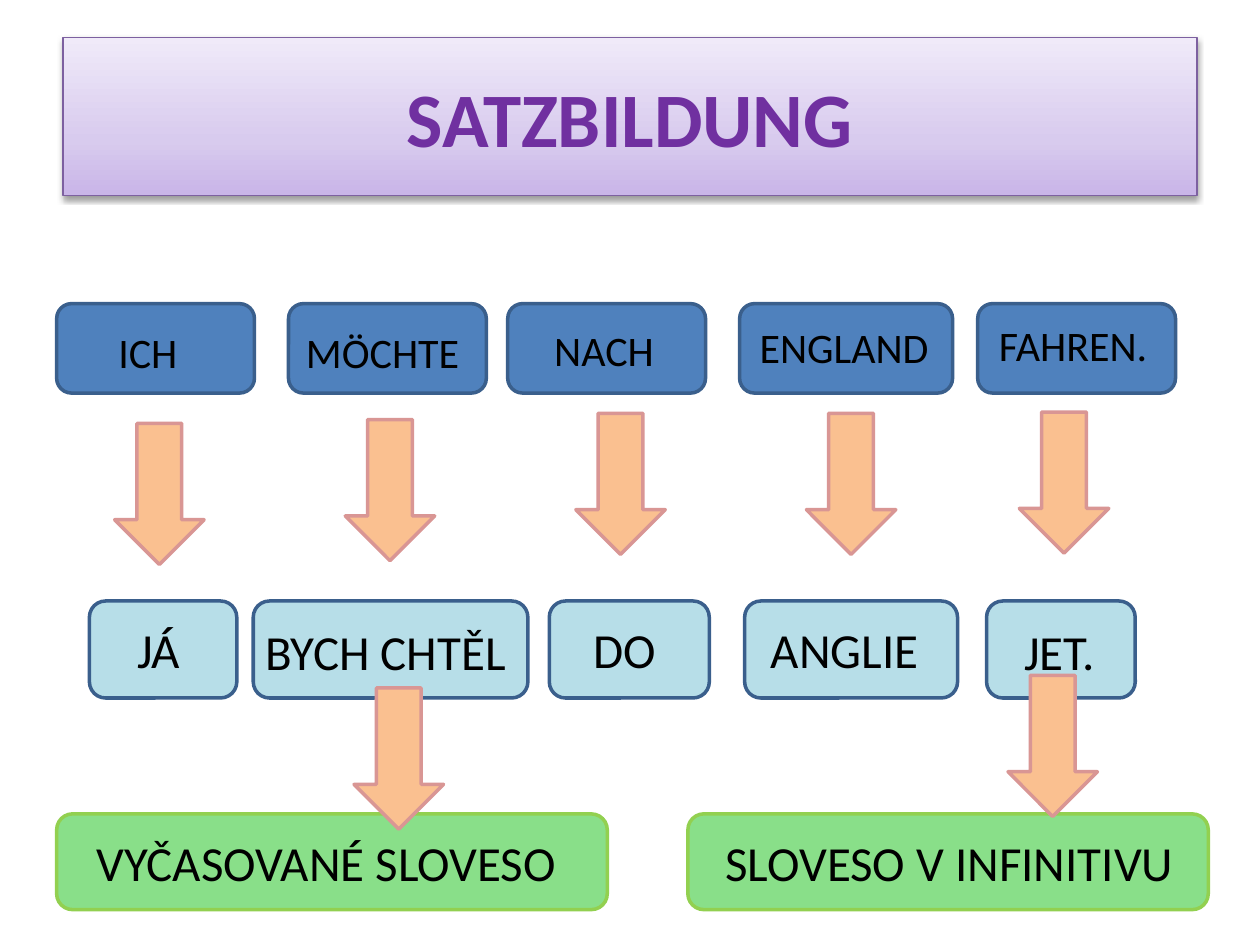
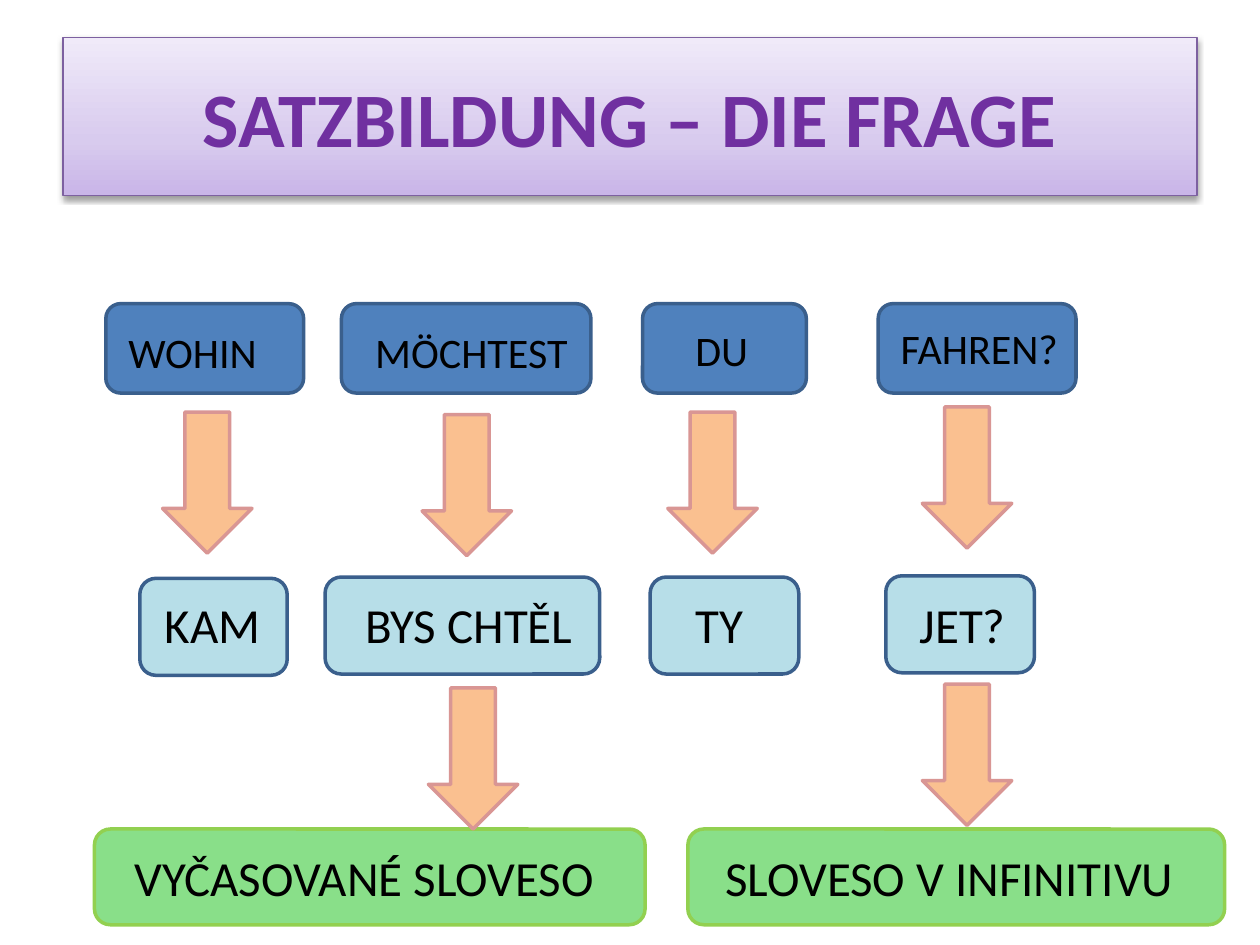
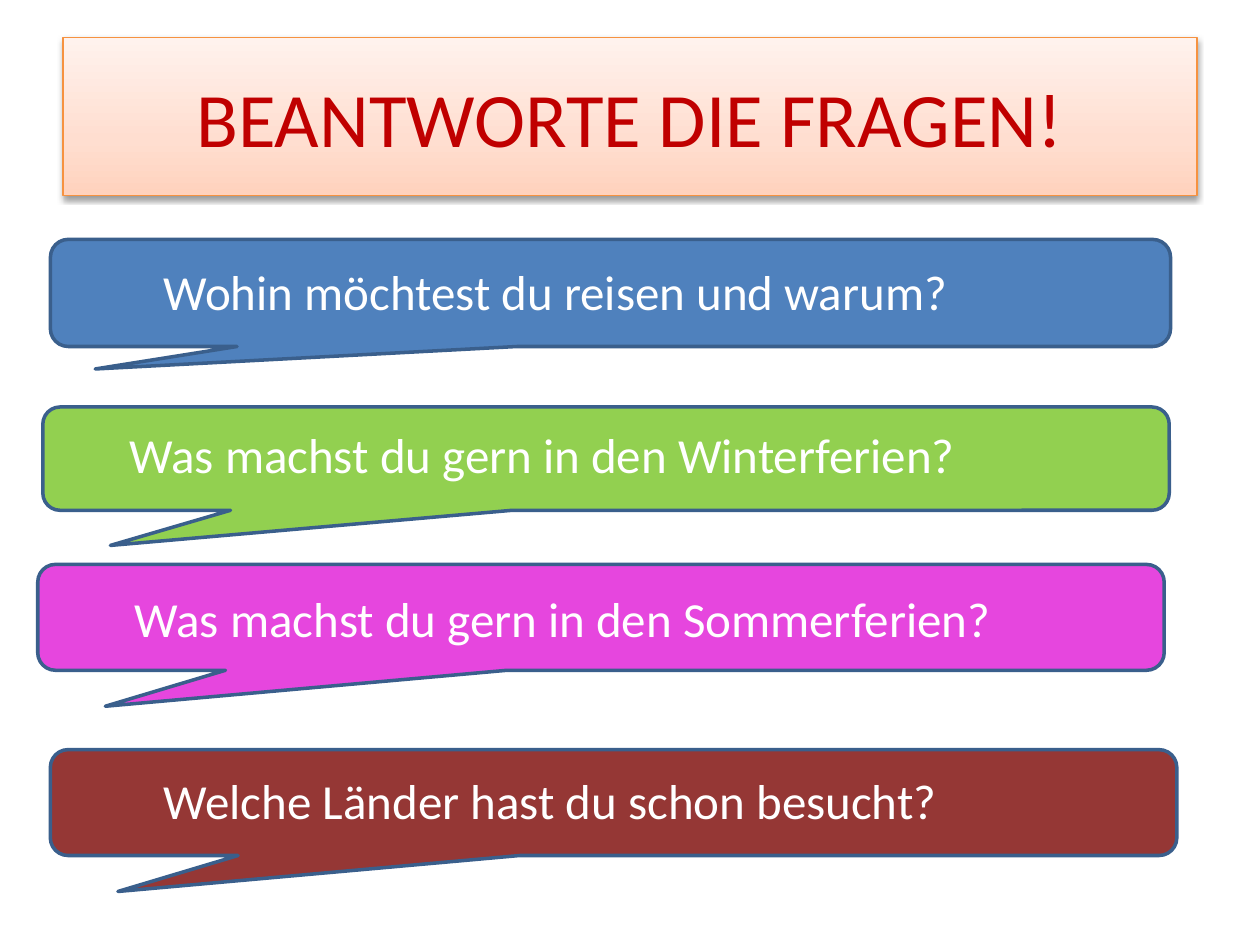
from copy import deepcopy

from lxml import etree
from pptx import Presentation
from pptx import util as u
from pptx.dml.color import RGBColor
from pptx.enum import shapes, text
from pptx.oxml.ns import qn

BLACK = RGBColor(0x00, 0x00, 0x00)
WHITE = RGBColor(0xFF, 0xFF, 0xFF)
BLUE = RGBColor(0x4F, 0x81, 0xBD)
DARK_BLUE = RGBColor(0x3A, 0x5F, 0x8C)
PALE_BLUE = RGBColor(0xB7, 0xDE, 0xE8)
PEACH = RGBColor(0xFA, 0xC0, 0x90)
ROSE = RGBColor(0xD9, 0x96, 0x94)
MINT = RGBColor(0x89, 0xDF, 0x89)
GREEN = RGBColor(0x92, 0xD0, 0x50)
PINK = RGBColor(0xE6, 0x46, 0xDE)
MAROON = RGBColor(0x95, 0x37, 0x35)
PURPLE = RGBColor(0x70, 0x30, 0xA0)
RED = RGBColor(0xC0, 0x00, 0x00)
VIOLET = RGBColor(0x7D, 0x60, 0xA0)
ORANGE = RGBColor(0xF6, 0x92, 0x40)
LILAC_BAND = [RGBColor(0xC9, 0xB5, 0xE8), RGBColor(0xD8, 0xCB, 0xEE), RGBColor(0xF0, 0xEA, 0xF9)]
APRICOT_BAND = [RGBColor(0xFF, 0xD2, 0xBD), RGBColor(0xFF, 0xDE, 0xD0), RGBColor(0xFF, 0xF2, 0xED)]

FONT = "Calibri"
KIND = shapes.MSO_SHAPE
GERMAN_TOP, GERMAN_HEIGHT = 2.41, 0.71
CZECH_HEIGHT, ROLE_HEIGHT = 0.77, 0.76
ARROW_WIDTH, ARROW_HEIGHT = 0.71, 1.12
LABEL_HEIGHT = {24: 0.5, 28: 0.57}


def add_block(slide, kind, left, top, width, height, fill, line=DARK_BLUE):
    block = slide.shapes.add_shape(kind, *map(u.Inches, (left, top, width, height)))
    block.shadow.inherit = False
    block.fill.solid()
    block.fill.fore_color.rgb = fill
    block.line.color.rgb = line
    block.line.width = u.Pt(2)
    return block


def add_label(slide, words, left, top, width, size, color=BLACK):
    label = slide.shapes.add_textbox(*map(u.Inches, (left, top, width, LABEL_HEIGHT[size])))
    frame = label.text_frame
    frame.word_wrap = True
    frame.auto_size = text.MSO_AUTO_SIZE.SHAPE_TO_FIT_TEXT
    frame.text = words
    font = frame.paragraphs[0].runs[0].font
    font.name, font.size, font.color.rgb = FONT, u.Pt(size), color


prs = Presentation()
prs.slide_width, prs.slide_height = u.Inches(10), u.Inches(7.5)

# Title bands
titles = [
    ("SATZBILDUNG", PURPLE, True, LILAC_BAND, VIOLET),
    ("SATZBILDUNG – DIE FRAGE", PURPLE, True, LILAC_BAND, VIOLET),
    ("BEANTWORTE DIE FRAGEN!", RED, False, APRICOT_BAND, ORANGE),
]
for words, color, bold, band, border in titles:
    title = prs.slides.add_slide(prs.slide_layouts[5]).shapes.title
    title.left, title.top, title.width, title.height = map(u.Inches, (0.5, 0.3, 9, 1.25))
    title.text_frame.text = words
    title.text_frame.vertical_anchor = text.MSO_ANCHOR.MIDDLE
    title.text_frame.paragraphs[0].alignment = text.PP_ALIGN.CENTER
    font = title.text_frame.paragraphs[0].runs[0].font
    font.name, font.size, font.bold, font.color.rgb = FONT, u.Pt(44), bold, color

    title.fill.gradient()
    title.fill.gradient_angle = 90
    stop_list = title.fill._fill._gradFill.find(qn("a:gsLst"))
    stop_list.append(deepcopy(stop_list[-1]))
    for stop, position, shade in zip(title.fill.gradient_stops, (0, 0.35, 1), band):
        stop.position, stop.color.rgb = position, shade
    title.line.color.rgb = border
    title.line.width = u.Pt(0.75)

    title.shadow.inherit = False
    effects = title._element.spPr.find(qn("a:effectLst"))
    shadow = etree.SubElement(effects, qn("a:outerShdw"), blurRad="40000", dist="20000",
                              dir="5400000", rotWithShape="0")
    black = etree.SubElement(shadow, qn("a:srgbClr"), val="000000")
    etree.SubElement(black, qn("a:alpha"), val="38000")

# Sentence diagrams: block (left, [top,] width), then label (left, top, width)
sentences = [
    {
        "german": [
            ("ICH", 0.45, 1.57, 0.84, 2.54, 0.92),
            ("MÖCHTE", 2.29, 1.57, 2.33, 2.54, 1.46),
            ("NACH", 4.03, 1.57, 4.3, 2.53, 1.25),
            ("ENGLAND", 5.87, 1.69, 5.93, 2.5, 1.65),
            ("FAHREN.", 7.76, 1.57, 7.83, 2.49, 1.57),
        ],
        "czech": [
            ("JÁ", 0.71, 4.77, 1.17, 0.99, 4.87, 0.86),
            ("BYCH CHTĚL", 2.01, 4.77, 2.18, 2.01, 4.88, 2.69),
            ("DO", 4.36, 4.77, 1.27, 4.61, 4.87, 0.86),
            ("ANGLIE", 5.91, 4.77, 1.69, 6.02, 4.87, 1.57),
            ("JET.", 7.83, 4.77, 1.18, 8.03, 4.88, 0.83),
        ],
        "roles_top": 6.46,
        "roles": [("VYČASOVANÉ SLOVESO", 0.45, 4.37, 0.67),
                  ("SLOVESO V INFINITIVU", 5.46, 4.13, 5.66)],
        "arrows": [(0.91, 3.36), (2.74, 3.33), (4.57, 3.28), (6.4, 3.28), (8.09, 3.27),
                   (2.81, 5.46), (8, 5.36)],
    },
    {
        "german": [
            ("WOHIN", 0.84, 1.57, 0.92, 2.54, 1.3),
            ("MÖCHTEST", 2.71, 1.98, 2.88, 2.54, 1.86),
            ("DU", 5.1, 1.3, 5.42, 2.53, 0.84),
            ("FAHREN?", 6.97, 1.57, 7.05, 2.51, 1.57),
        ],
        "czech": [
            ("KAM", 1.11, 4.59, 1.17, 1.21, 4.67, 1.01),
            ("BYS CHTĚL", 2.58, 4.58, 2.18, 2.8, 4.67, 1.96),
            ("TY", 5.16, 4.58, 1.18, 5.42, 4.67, 0.86),
            ("JET?", 7.03, 4.57, 1.18, 7.2, 4.67, 1.01),
        ],
        "roles_top": 6.58,
        "roles": [("VYČASOVANÉ SLOVESO", 0.75, 4.37, 0.97),
                  ("SLOVESO V INFINITIVU", 5.46, 4.26, 5.66)],
        "arrows": [(1.29, 3.27), (3.35, 3.29), (5.3, 3.27), (7.32, 3.23),
                   (3.4, 5.46), (7.32, 5.43)],
    },
]
for slide, sentence in zip(prs.slides, sentences):
    # German words
    for word, left, width, *label_place in sentence["german"]:
        add_block(slide, KIND.ROUNDED_RECTANGLE, left, GERMAN_TOP, width, GERMAN_HEIGHT, BLUE)
        add_label(slide, word, *label_place, 24)

    # Czech translations
    for word, left, top, width, *label_place in sentence["czech"]:
        add_block(slide, KIND.ROUNDED_RECTANGLE, left, top, width, CZECH_HEIGHT, PALE_BLUE)
        add_label(slide, word, *label_place, 28)

    # Roles of the two verbs, with the arrows above their blocks
    roles_top = sentence["roles_top"]
    for role, left, width, label_left in sentence["roles"]:
        add_block(slide, KIND.ROUNDED_RECTANGLE, left, roles_top, width, ROLE_HEIGHT, MINT, GREEN)
    for left, top in sentence["arrows"]:
        add_block(slide, KIND.DOWN_ARROW, left, top, ARROW_WIDTH, ARROW_HEIGHT, PEACH, ROSE)
    for role, left, width, label_left in sentence["roles"]:
        add_label(slide, role, label_left, roles_top + 0.1, 3.94, 28)

# Questions in speech bubbles
questions = [
    ("Wohin möchtest du reisen und warum?", BLUE,
     (0.4, 1.9, 8.89, 0.85), (-0.46, 0.71), (1.2, 2.03, 7.26)),
    ("Was machst du gern in den Winterferien?", GREEN,
     (0.34, 3.23, 8.94, 0.82), (-0.44, 0.84), (0.93, 3.32, 7.69)),
    ("Was machst du gern in den Sommerferien?", PINK,
     (0.3, 4.48, 8.94, 0.84), (-0.44, 0.84), (0.97, 4.62, 7.69)),
    ("Welche Länder hast du schon besucht?", MAROON,
     (0.4, 5.95, 8.94, 0.84), (-0.44, 0.84), (1.2, 6.07, 8.35)),
]
for question, fill, bubble_place, tip, label_place in questions:
    bubble = add_block(prs.slides[2], KIND.ROUNDED_RECTANGULAR_CALLOUT, *bubble_place, fill)
    bubble.adjustments[0], bubble.adjustments[1] = tip
    add_label(prs.slides[2], question, *label_place, 28, WHITE)

prs.save("out.pptx")
